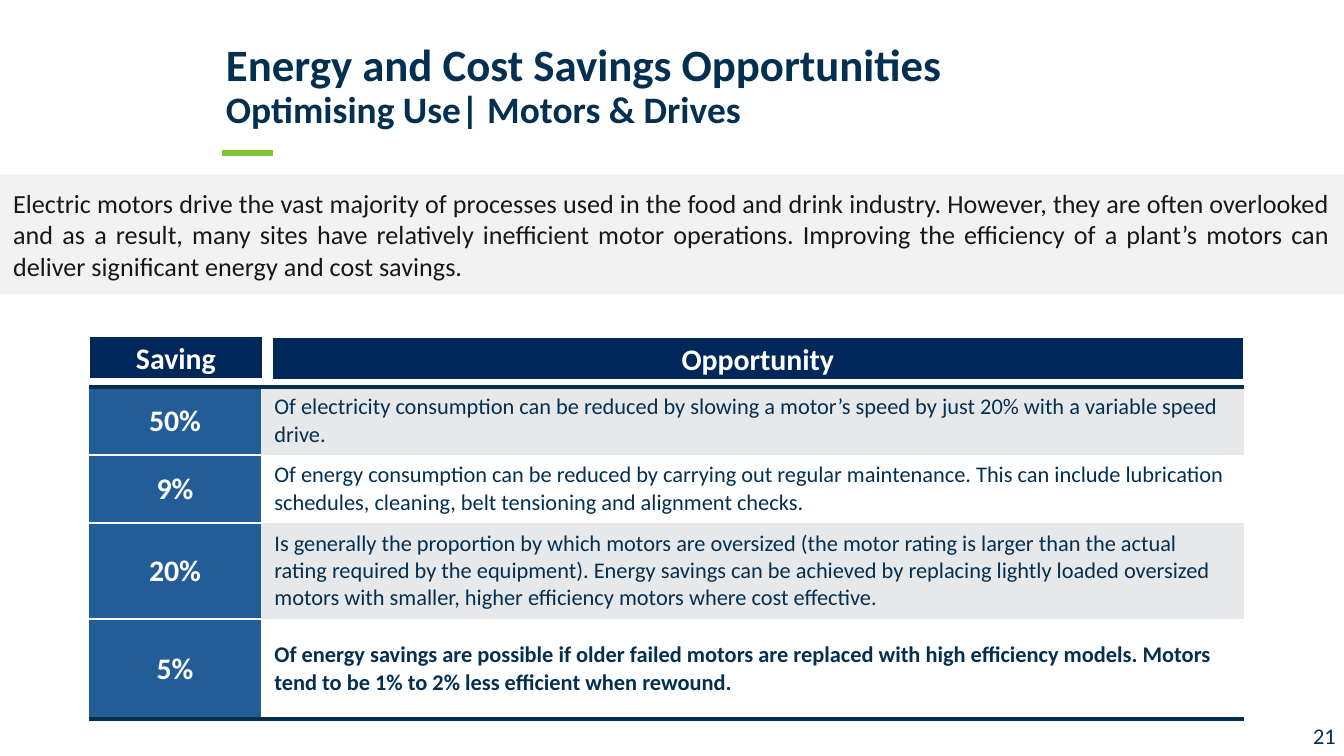
from lxml.etree import SubElement
from pptx import Presentation
from pptx.dml.color import RGBColor
from pptx.enum.shapes import MSO_CONNECTOR, MSO_SHAPE
from pptx.enum.text import MSO_ANCHOR, MSO_AUTO_SIZE, PP_ALIGN
from pptx.oxml.ns import qn
from pptx.util import Emu, Pt

TITLE = "Energy and Cost Savings Opportunities "
SUBTITLE = "Optimising Use| Motors & Drives"
INTRO = (
    "Electric motors drive the vast majority of processes used in the food and drink industry. "
    "However, they are often overlooked and as a result, many sites have relatively inefficient "
    "motor operations. Improving the efficiency of a plant’s motors can deliver significant "
    "energy and cost savings."
)
PAGE = "21"
HEADERS = [  # text, box in px
    ("Opportunity", (272, 337, 972, 43)),
    ("Saving", (89, 336, 174, 43)),
]
ROWS = [  # saving, opportunity, height in px, bold
    ("50%", "Of electricity consumption can be reduced by slowing a motor’s speed by just 20% "
            "with a variable speed drive.", 68, False),
    ("9%", "Of energy consumption can be reduced by carrying out regular maintenance. This can "
           "include lubrication schedules, cleaning, belt tensioning and alignment checks.",
     68, False),
    ("20%", "Is generally the proportion by which motors are oversized (the motor rating is "
            "larger than the actual rating required by the equipment). Energy savings can be "
            "achieved by replacing lightly loaded oversized motors with smaller, higher "
            "efficiency motors where cost effective.", 96, False),
    ("5%", "Of energy savings are possible if older failed motors are replaced with high "
           "efficiency models. Motors tend to be 1% to 2% less efficient when rewound.",
     100, True),
]
COLUMNS = [172, 983]
TABLE_LEFT, TABLE_TOP = 89, 387

COLORS = {
    "navy": "032F51", "header": "00275A", "blue": "235D97", "green": "80C337",
    "band": "E7E8E9", "intro": "F2F2F2", "ink": "181717", "white": "FFFFFF",
}
FONT = "Calibri"


def px(n):
    return Emu(round(n * 914400 / 134.4))


def box(*lengths):
    return [px(n) for n in lengths]


def rgb(name):
    return RGBColor.from_string(COLORS[name])


def add_run(p, text, size, color, bold=False):
    r = p.add_run()
    r.text = text
    r.font.name, r.font.size, r.font.bold = FONT, Pt(size), bold
    r.font.color.rgb = rgb(color)


def write(tf, text, size, color, bold=False, align=PP_ALIGN.CENTER):
    tf.word_wrap = True
    tf.vertical_anchor = MSO_ANCHOR.MIDDLE
    tf.paragraphs[0].alignment = align
    add_run(tf.paragraphs[0], text, size, color, bold)


def no_margins(tf):
    tf.margin_left = tf.margin_top = tf.margin_right = tf.margin_bottom = 0


def add_rect(s, bounds, fill, line=None):
    sp = s.shapes.add_shape(MSO_SHAPE.RECTANGLE, *box(*bounds))
    sp.shadow.inherit = False
    sp.fill.solid()
    sp.fill.fore_color.rgb = rgb(fill)
    if line:
        sp.line.color.rgb = rgb(line)
        sp.line.width = Pt(1)
    else:
        sp.line.fill.background()
    return sp


def set_borders(cell, top, bottom):
    """Draw top and bottom as (colour, points) or None; leave the sides open."""
    tc_pr = cell._tc.get_or_add_tcPr()
    for tag, border in (("a:lnL", None), ("a:lnR", None), ("a:lnT", top), ("a:lnB", bottom)):
        ln = SubElement(tc_pr, qn(tag))
        if border:
            color, points = border
            ln.set("w", str(Pt(points)))
            SubElement(SubElement(ln, qn("a:solidFill")), qn("a:srgbClr"), val=COLORS[color])
        else:
            SubElement(ln, qn("a:noFill"))


def add_title(s):
    title = s.shapes.title
    title.left, title.top, title.width, title.height = box(226, 38, 1079, 94)
    tf = title.text_frame
    no_margins(tf)
    tf.word_wrap = True
    tf.auto_size = MSO_AUTO_SIZE.NONE
    tf.vertical_anchor = MSO_ANCHOR.BOTTOM
    p = tf.paragraphs[0]
    p.alignment, p.line_spacing = PP_ALIGN.LEFT, 0.9
    add_run(p, TITLE, 24, "navy", True)
    p.add_line_break()
    SubElement(p._p[-1], qn("a:rPr"), sz="2400")
    add_run(p, SUBTITLE, 20, "navy", True)

    rule = s.shapes.add_connector(MSO_CONNECTOR.STRAIGHT, *box(222, 153, 273, 153))
    rule.line.color.rgb = rgb("green")
    rule.line.width = Pt(3)
    SubElement(rule._element.spPr, qn("a:effectLst"))


def add_savings_table(s):
    heights = [row[2] for row in ROWS]
    bounds = box(TABLE_LEFT, TABLE_TOP, sum(COLUMNS), sum(heights))
    table = s.shapes.add_table(len(ROWS), len(COLUMNS), *bounds).table
    table.first_row = table.horz_banding = False
    for column, width in zip(table.columns, COLUMNS):
        column.width = px(width)
    edge, divider = ("navy", 2), ("white", 1)
    for i, (saving, opportunity, height, bold) in enumerate(ROWS):
        table.rows[i].height = px(height)
        band = "white" if i % 2 else "band"
        content = [
            (saving, 16, "white", True, PP_ALIGN.CENTER, "blue", divider),
            (opportunity, 12, "navy", bold, PP_ALIGN.LEFT, band, None),
        ]
        for j, (text, size, color, is_bold, align, fill, inner) in enumerate(content):
            cell = table.cell(i, j)
            cell.vertical_anchor = MSO_ANCHOR.MIDDLE
            p = cell.text_frame.paragraphs[0]
            p.alignment = align
            add_run(p, text, size, color, is_bold)
            set_borders(cell, inner if i else edge, inner if i < len(ROWS) - 1 else edge)
            cell.fill.solid()
            cell.fill.fore_color.rgb = rgb(fill)


def main():
    prs = Presentation()
    prs.slide_width, prs.slide_height = box(1344, 756)
    s = prs.slides.add_slide(prs.slide_layouts[5])
    add_title(s)

    page = s.shapes.add_textbox(*box(1305, 716, 39, 40)).text_frame
    no_margins(page)
    write(page, PAGE, 12, "navy")

    intro = add_rect(s, (0, 175, 1344, 119), "intro")
    write(intro.text_frame, INTRO, 14, "ink", align=PP_ALIGN.JUSTIFY)

    add_savings_table(s)
    for text, bounds in HEADERS:
        header = add_rect(s, bounds, "header", "white")
        write(header.text_frame, text, 16, "white", True)
    prs.save("out.pptx")


if __name__ == "__main__":
    main()
